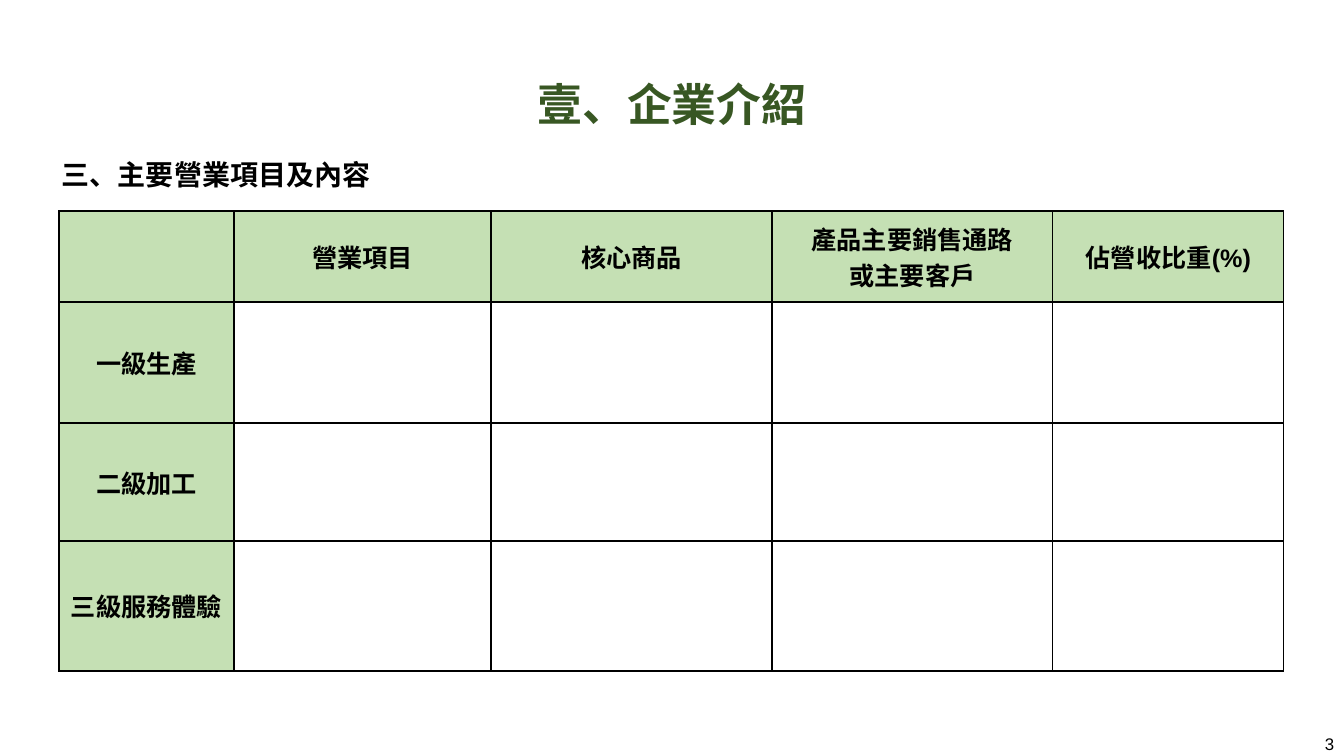
from lxml import etree
from pptx import Presentation
from pptx.dml.color import RGBColor
from pptx.enum.text import MSO_ANCHOR, PP_ALIGN
from pptx.oxml.ns import qn
from pptx.util import Pt

PX = 914400 / 100.8
LEFT, CENTER, RIGHT = PP_ALIGN.LEFT, PP_ALIGN.CENTER, PP_ALIGN.RIGHT
MIDDLE = MSO_ANCHOR.MIDDLE

DARK_GREEN = RGBColor(0x38, 0x57, 0x23)
LIGHT_GREEN = RGBColor(0xC5, 0xE0, 0xB4)
BLACK = RGBColor(0, 0, 0)
WHITE = RGBColor(0xFF, 0xFF, 0xFF)
CJK = "Noto Sans CJK SC"

TITLE_FONT = {"size": Pt(32), "bold": True, "name": CJK}
HEADING_FONT = {"size": Pt(20), "bold": True, "name": CJK}
CELL_FONT = {"size": Pt(18), "bold": True, "name": "Arial"}
NUMBER_FONT = {"size": Pt(12), "bold": False, "name": "Arial"}

COLUMNS = [175, 257, 281, 281, 231]
ROWS = [91, 121, 118, 130]
HEADERS = ["", "營業項目", "核心商品", "產品主要銷售通路\n或主要客戶", "佔營收比重(%)"]
LEVELS = ["一級生產", "二級加工", "三級服務體驗"]


def px(n):
    return round(n * PX)


def place(shape, left, top, width, height):
    shape.left, shape.top = px(left), px(top)
    shape.width, shape.height = px(width), px(height)


def write(tf, text, font, align, color=BLACK):
    """Put each line of text in its own paragraph."""
    for i, line in enumerate(text.split("\n")):
        p = tf.add_paragraph() if i else tf.paragraphs[0]
        p.alignment = align
        r = p.add_run()
        r.text = line
        for name, value in font.items():
            setattr(r.font, name, value)
        r.font.color.rgb = color
        ea = etree.SubElement(r.font._element, qn("a:ea"))
        ea.set("typeface", CJK)


def add_title(s, text):
    title = s.shapes.title
    place(title, 0, 72, 1344, 64)
    title.text_frame.vertical_anchor = MIDDLE
    write(title.text_frame, text, TITLE_FONT, CENTER, DARK_GREEN)


def add_text(s, box, text, font, align):
    tf = s.shapes.add_textbox(*map(px, box)).text_frame
    tf.word_wrap = True
    write(tf, text, font, align)
    return tf.paragraphs[0]


def add_borders(cell):
    tcPr = cell._tc.get_or_add_tcPr()
    for side in ("a:lnL", "a:lnR", "a:lnT", "a:lnB"):
        ln = etree.SubElement(tcPr, qn(side), w=str(Pt(1)))
        fill = etree.SubElement(ln, qn("a:solidFill"))
        etree.SubElement(fill, qn("a:srgbClr"), val=str(BLACK))


def format_cell(cell, text, color):
    cell.vertical_anchor = MIDDLE
    cell.margin_left = cell.margin_right = px(7)
    cell.margin_top = cell.margin_bottom = 0
    add_borders(cell)
    cell.fill.solid()
    cell.fill.fore_color.rgb = color
    if text:
        write(cell.text_frame, text, CELL_FONT, CENTER)


def add_business_table(s, left, top):
    box = (left, top, sum(COLUMNS), sum(ROWS))
    table = s.shapes.add_table(len(ROWS), len(COLUMNS), *map(px, box)).table
    table.first_row = table.horz_banding = False
    for column, width in zip(table.columns, COLUMNS):
        column.width = px(width)
    for row, height in zip(table.rows, ROWS):
        row.height = px(height)
    blanks = [""] * (len(COLUMNS) - 1)
    grid = [HEADERS] + [[level] + blanks for level in LEVELS]
    for i, texts in enumerate(grid):
        for j, text in enumerate(texts):
            color = WHITE if i and j else LIGHT_GREEN
            format_cell(table.cell(i, j), text, color)


def main():
    prs = Presentation()
    prs.slide_width, prs.slide_height = px(1344), px(756)
    s = prs.slides.add_slide(prs.slide_layouts[5])
    add_title(s, "壹、企業介紹")
    add_text(s, (1041, 729, 303, 27), "3", NUMBER_FONT, RIGHT)
    heading = add_text(s, (52, 155, 536, 41), "三、主要營業項目及內容", HEADING_FONT, LEFT)
    heading.line_spacing = Pt(22)
    heading.space_after = Pt(6)
    add_business_table(s, 59, 211)
    prs.save("out.pptx")


if __name__ == "__main__":
    main()
